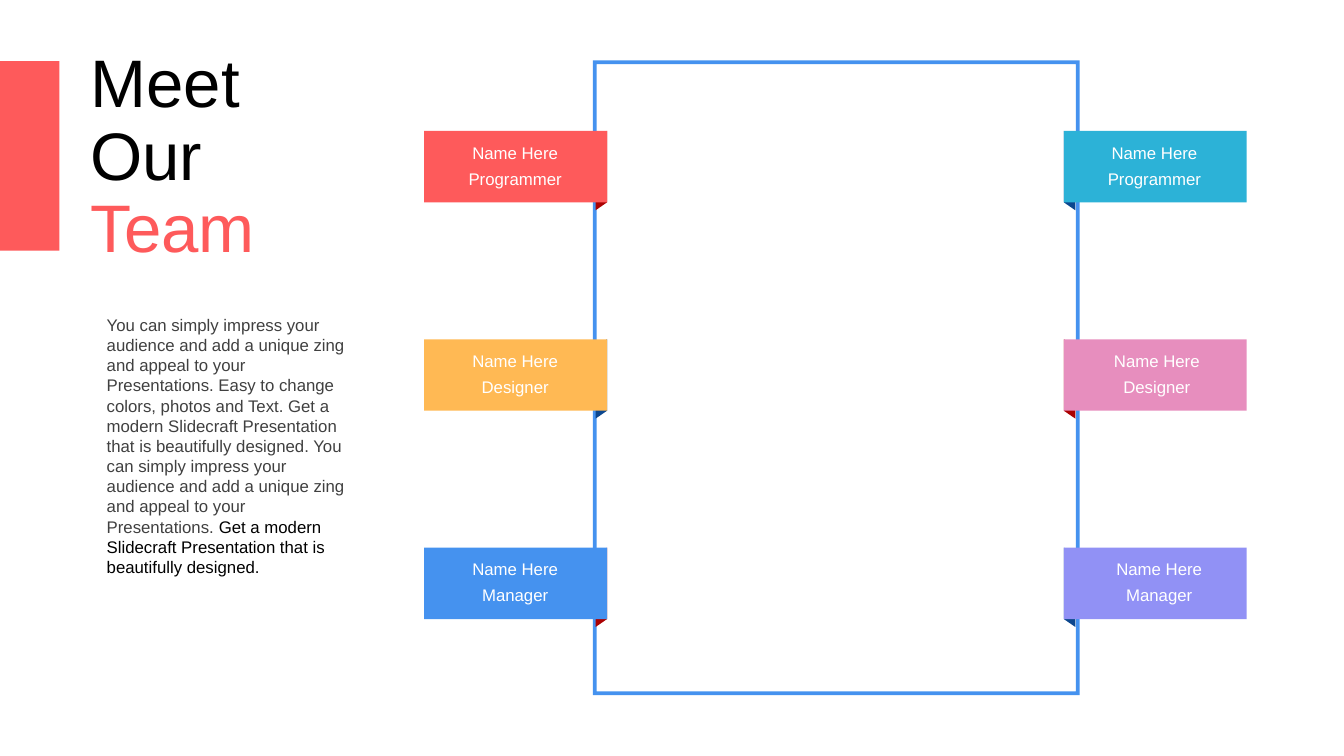
from dataclasses import dataclass

import pptx
import pptx.dml.color
import pptx.enum.shapes
import pptx.enum.text
import pptx.shapes.autoshape
import pptx.slide
import pptx.util
from pptx.dml.color import RGBColor
from pptx.util import Cm

WHITE = RGBColor(0xFF, 0xFF, 0xFF)
BLACK = RGBColor(0x00, 0x00, 0x00)
GREY = RGBColor(0x40, 0x40, 0x40)
CORAL = RGBColor(0xFE, 0x5A, 0x5B)
AMBER = RGBColor(0xFF, 0xB9, 0x54)
BLUE = RGBColor(0x45, 0x92, 0xEF)
CYAN = RGBColor(0x2C, 0xB2, 0xD7)
PINK = RGBColor(0xE7, 0x8E, 0xBE)
VIOLET = RGBColor(0x91, 0x91, 0xF5)
DARK_RED = RGBColor(0xAB, 0x01, 0x02)
NAVY = RGBColor(0x0C, 0x47, 0x8E)

FONT = "Arial"
CARD_WIDTH, CARD_HEIGHT = 4.61, 1.8
FIRST_CARD_TOP, ROW_STEP = 3.3, 5.25
LEFT_CARD, RIGHT_CARD = 10.69, 26.81
FOLD_WIDTH, FOLD_DROP = 0.29, 0.2
LABEL_WIDTH, LABEL_HEIGHT = 4.29, 0.69
LABEL_INSET, LABEL_STEP = 0.2, 0.65

MIDDLE = pptx.enum.text.MSO_ANCHOR.MIDDLE
TOP = pptx.enum.text.MSO_ANCHOR.TOP
LEFT = pptx.enum.text.PP_ALIGN.LEFT
CENTER = pptx.enum.text.PP_ALIGN.CENTER
RECTANGLE = pptx.enum.shapes.MSO_SHAPE.RECTANGLE
FRAME = pptx.enum.shapes.MSO_SHAPE.FRAME


@dataclass(frozen=True)
class Box:
    left: float
    top: float
    width: float
    height: float

    def lengths(self) -> tuple[Cm, Cm, Cm, Cm]:
        return Cm(self.left), Cm(self.top), Cm(self.width), Cm(self.height)


@dataclass(frozen=True)
class Member:
    role: str
    row: int
    on_left: bool
    color: RGBColor
    fold_color: RGBColor
    label_shift: float


MEMBERS = [
    Member("Programmer", 0, True, CORAL, DARK_RED, 0.15),
    Member("Designer", 1, True, AMBER, NAVY, 0.15),
    Member("Manager", 2, True, BLUE, DARK_RED, 0.15),
    Member("Programmer", 0, False, CYAN, NAVY, 0.14),
    Member("Designer", 1, False, PINK, DARK_RED, 0.2),
    Member("Manager", 2, False, VIOLET, NAVY, 0.26),
]


def paint(shape: pptx.shapes.autoshape.Shape, color: RGBColor) -> None:
    shape.shadow.inherit = False
    shape.fill.solid()
    shape.fill.fore_color.rgb = color
    shape.line.fill.background()


def add_block(
    slide: pptx.slide.Slide,
    box: Box,
    color: RGBColor,
    preset: pptx.enum.shapes.MSO_SHAPE = RECTANGLE,
) -> pptx.shapes.autoshape.Shape:
    block = slide.shapes.add_shape(preset, *box.lengths())
    paint(block, color)
    return block


def add_text(
    slide: pptx.slide.Slide,
    box: Box,
    *runs: tuple[str, RGBColor],
    size: float = 12,
    align: pptx.enum.text.PP_ALIGN = LEFT,
    anchor: pptx.enum.text.MSO_ANCHOR = TOP,
    line_spacing: float | None = None,
    space_before: float = 0,
    side_margin: float = 0.25,
    end_margin: float = 0.13,
    grow: bool = False,
) -> None:
    frame = slide.shapes.add_textbox(*box.lengths()).text_frame
    frame.word_wrap = True
    frame.vertical_anchor = anchor
    frame.margin_left = frame.margin_right = Cm(side_margin)
    frame.margin_top = frame.margin_bottom = Cm(end_margin)
    if grow:
        frame.auto_size = pptx.enum.text.MSO_AUTO_SIZE.SHAPE_TO_FIT_TEXT
    paragraph = frame.paragraphs[0]
    paragraph.alignment = align
    paragraph.space_before = pptx.util.Pt(space_before)
    if line_spacing is not None:
        paragraph.line_spacing = line_spacing
    for words, color in runs:
        run = paragraph.add_run()
        run.text = words
        run.font.name = FONT
        run.font.size = pptx.util.Pt(size)
        run.font.color.rgb = color


def add_fold(slide: pptx.slide.Slide, outer: float, inner: float, top: float, color: RGBColor) -> None:
    bottom = top + CARD_HEIGHT
    builder = slide.shapes.build_freeform(Cm(outer), Cm(top))
    builder.add_line_segments(
        [
            (Cm(outer), Cm(bottom)),
            (Cm(inner), Cm(bottom + FOLD_DROP)),
            (Cm(inner), Cm(top + FOLD_DROP)),
        ],
        close=True,
    )
    paint(builder.convert_to_shape(), color)


def add_member(slide: pptx.slide.Slide, member: Member) -> None:
    top = FIRST_CARD_TOP + member.row * ROW_STEP
    left = LEFT_CARD if member.on_left else RIGHT_CARD
    outer = left + CARD_WIDTH if member.on_left else left
    inner = outer - FOLD_WIDTH if member.on_left else outer + FOLD_WIDTH
    add_fold(slide, outer, inner, top, member.fold_color)
    add_block(slide, Box(left, top, CARD_WIDTH, CARD_HEIGHT), member.color)
    for index, words in enumerate(("Name Here", member.role)):
        label_top = top + LABEL_INSET + index * LABEL_STEP
        add_text(
            slide,
            Box(left + member.label_shift, label_top, LABEL_WIDTH, LABEL_HEIGHT),
            (words, WHITE),
            align=CENTER,
            anchor=MIDDLE,
            space_before=2.4,
            side_margin=0,
            end_margin=0,
        )


def main() -> None:
    presentation = pptx.Presentation()
    presentation.slide_width = Cm(33.87)
    presentation.slide_height = Cm(19.05)
    slide = presentation.slides.add_slide(presentation.slide_layouts[6])

    team_frame = add_block(slide, Box(14.94, 1.52, 12.27, 16), BLUE, FRAME)
    team_frame.adjustments[0] = 0.008
    add_text(
        slide,
        Box(2.44, 7.8, 6.73, 6.93),
        (
            "You can simply impress your audience and add a unique zing and appeal "
            "to your Presentations. Easy to change colors, photos and Text. Get a "
            "modern Slidecraft Presentation that is beautifully designed. You can "
            "simply impress your audience and add a unique zing and appeal to your "
            "Presentations. ",
            GREY,
        ),
        ("Get a modern Slidecraft Presentation that is beautifully designed.", BLACK),
        grow=True,
    )
    add_block(slide, Box(0, 1.54, 1.5, 4.78), CORAL)
    for member in MEMBERS:
        add_member(slide, member)
    add_text(
        slide,
        Box(2.03, 1.07, 5.33, 5.84),
        ("Meet Our ", BLACK),
        ("Team", CORAL),
        size=48,
        anchor=MIDDLE,
        line_spacing=0.9,
    )
    presentation.save("out.pptx")


if __name__ == "__main__":
    main()
